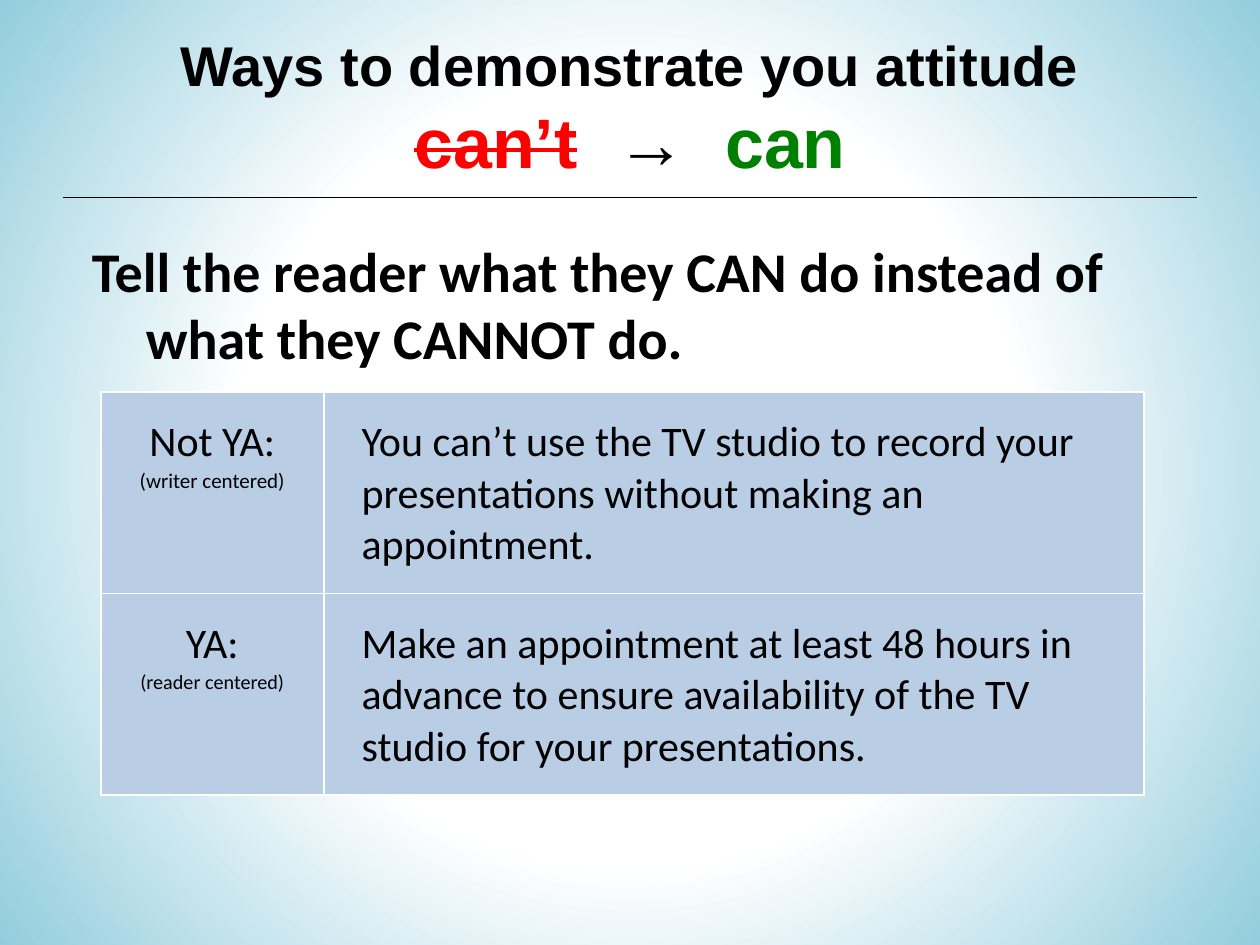
from lxml import etree
from pptx import Presentation
from pptx.dml.color import RGBColor
from pptx.enum.shapes import MSO_CONNECTOR
from pptx.enum.text import MSO_ANCHOR, PP_ALIGN
from pptx.oxml.ns import qn
from pptx.util import Inches, Pt

CENTER, LEFT = PP_ALIGN.CENTER, PP_ALIGN.LEFT
MIDDLE, TOP = MSO_ANCHOR.MIDDLE, MSO_ANCHOR.TOP
STRAIGHT = MSO_CONNECTOR.STRAIGHT
TITLE_ONLY = 5

SLIDE_WIDTH, SLIDE_HEIGHT = 10, 7.5
MARGIN = 0.5
BLACK, WHITE, RED, GREEN = "000000", "FFFFFF", "FF0000", "008000"
SKY, CELL_BLUE = "93CDDD", "B9CDE5"

COLUMN_WIDTHS = (1.77, 6.51)
ROW_HEIGHT = 1.6
EXAMPLES = [
    ("Not YA:", "(writer centered)", 12,
     "You can’t use the TV studio to record your presentations "
     "without making an appointment."),
    ("YA:", "(reader centered)", 11.5,
     "Make an appointment at least 48 hours in advance to ensure "
     "availability of the TV studio for your presentations."),
]


def color(hex_value):
    return RGBColor.from_string(hex_value)


def format_run(run, size, font="Calibri", hex_value=BLACK, bold=False):
    run.font.size = Pt(size)
    run.font.name = font
    run.font.bold = bold
    run.font.color.rgb = color(hex_value)


def set_background(slide):
    """Radial gradient, white in the middle and sky blue at the corners."""
    fill = slide.background.fill
    fill.gradient()
    for stop, (position, hex_value) in zip(fill.gradient_stops, [(0.5, WHITE), (1, SKY)]):
        stop.position = position
        stop.color.rgb = color(hex_value)
    gradient = slide.element.find(".//" + qn("a:gradFill"))
    gradient.remove(gradient.find(qn("a:lin")))
    circle = etree.SubElement(gradient, qn("a:path"), path="circle")
    etree.SubElement(circle, qn("a:fillToRect"), l="50000", t="50000", r="50000", b="50000")


def add_title(slide):
    title = slide.shapes.title
    title.left, title.top = Inches(MARGIN), Inches(0.07)
    title.width, title.height = Inches(SLIDE_WIDTH - 2 * MARGIN), Inches(1.55)
    title.text_frame.vertical_anchor = MIDDLE
    title.text_frame.text = "Ways to demonstrate you attitude"
    paragraph = title.text_frame.paragraphs[0]
    paragraph.alignment = CENTER
    format_run(paragraph.runs[0], 32, "Arial", bold=True)
    paragraph.add_line_break()
    for text, hex_value in [("can’t", RED), ("  ", RED), ("→  ", BLACK), ("can", GREEN)]:
        run = paragraph.add_run()
        run.text = text
        format_run(run, 40, "Arial", hex_value, bold=True)
        if text == "can’t":
            run.font._element.set("strike", "sngStrike")


def add_rule(slide):
    y = Inches(1.57)
    line = slide.shapes.add_connector(
        STRAIGHT, Inches(MARGIN), y, Inches(SLIDE_WIDTH - MARGIN), y)
    line.line.color.rgb = color(BLACK)
    line.line.width = Pt(0.75)
    etree.SubElement(line.element.spPr, qn("a:effectLst"))


def add_advice(slide):
    box = slide.shapes.add_textbox(Inches(MARGIN), Inches(1.83), Inches(8.58), Inches(4.67))
    box.text_frame.word_wrap = True
    box.text_frame.text = "Tell the reader what they CAN do instead of what they CANNOT do."
    paragraph = box.text_frame.paragraphs[0]
    properties = paragraph._p.get_or_add_pPr()
    properties.set("marL", str(Inches(0.56)))
    properties.set("indent", str(Inches(-0.43)))
    format_run(paragraph.runs[0], 32, bold=True)


def add_borders(cell):
    properties = cell._tc.get_or_add_tcPr()
    for side in ("a:lnL", "a:lnR", "a:lnT", "a:lnB"):
        border = etree.SubElement(properties, qn(side), w=str(Pt(1)))
        fill = etree.SubElement(border, qn("a:solidFill"))
        etree.SubElement(fill, qn("a:srgbClr"), val=WHITE)


def fill_cell(cell, lines, alignment):
    """Write (text, size) lines into a bordered blue cell."""
    add_borders(cell)
    cell.fill.solid()
    cell.fill.fore_color.rgb = color(CELL_BLUE)
    cell.margin_left = cell.margin_right = Inches(0.3)
    cell.margin_top = cell.margin_bottom = Inches(0.2)
    cell.vertical_anchor = TOP
    cell.text_frame.text = "\n".join(text for text, _ in lines)
    for paragraph, (_, size) in zip(cell.text_frame.paragraphs, lines):
        paragraph.alignment = alignment
        format_run(paragraph.runs[0], size)


def add_examples(slide):
    table = slide.shapes.add_table(
        len(EXAMPLES), len(COLUMN_WIDTHS), Inches(0.8), Inches(3.11),
        Inches(sum(COLUMN_WIDTHS)), Inches(ROW_HEIGHT * len(EXAMPLES))).table
    table.first_row = table.horz_banding = False
    for column, width in zip(table.columns, COLUMN_WIDTHS):
        column.width = Inches(width)
    for row, (label, note, note_size, example) in enumerate(EXAMPLES):
        fill_cell(table.cell(row, 0), [(label, 24), (note, note_size)], CENTER)
        fill_cell(table.cell(row, 1), [(example, 24)], LEFT)


def main():
    presentation = Presentation()
    presentation.slide_width = Inches(SLIDE_WIDTH)
    presentation.slide_height = Inches(SLIDE_HEIGHT)
    slide = presentation.slides.add_slide(presentation.slide_layouts[TITLE_ONLY])
    set_background(slide)
    add_title(slide)
    add_advice(slide)
    add_rule(slide)
    add_examples(slide)
    presentation.save("out.pptx")


if __name__ == "__main__":
    main()
